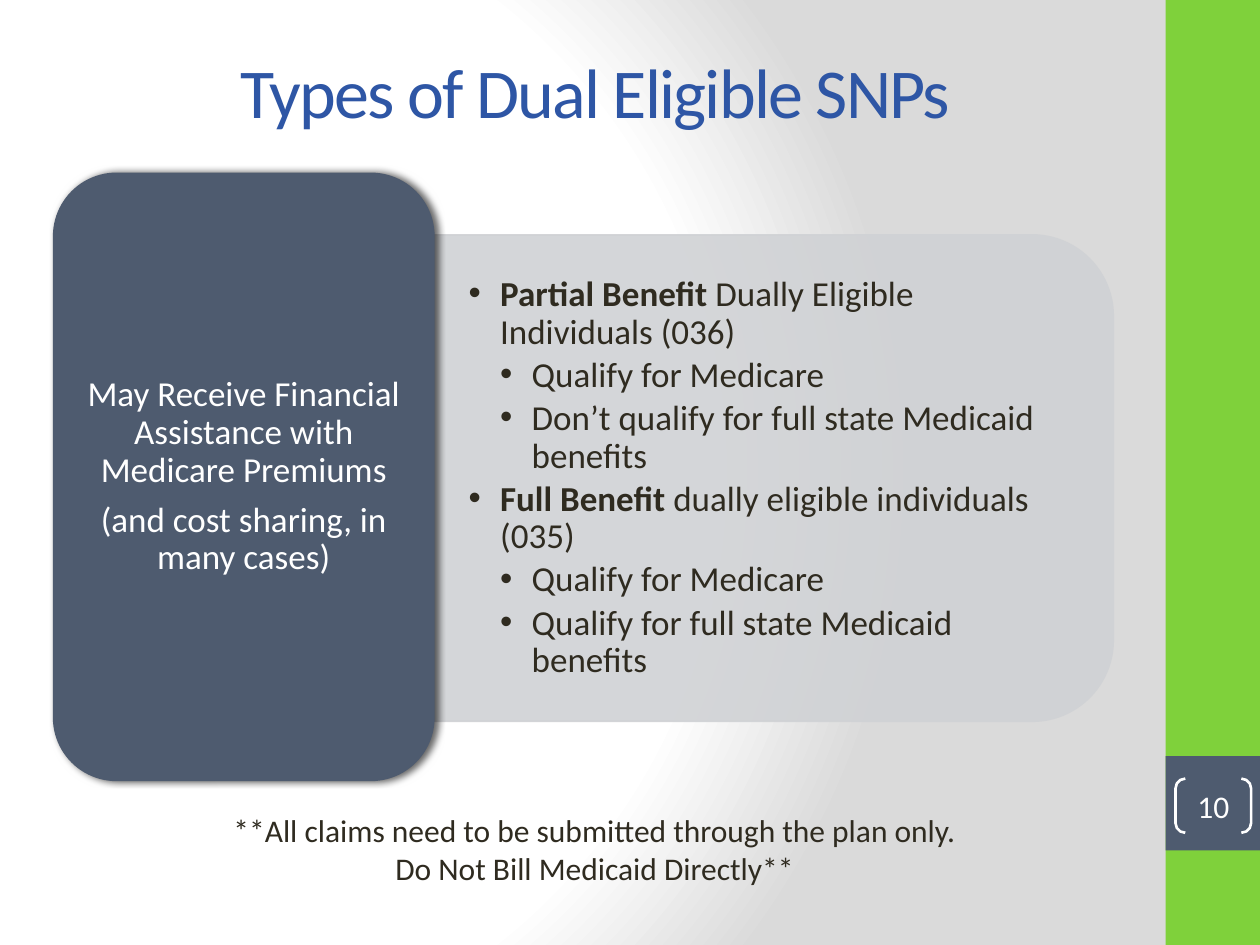
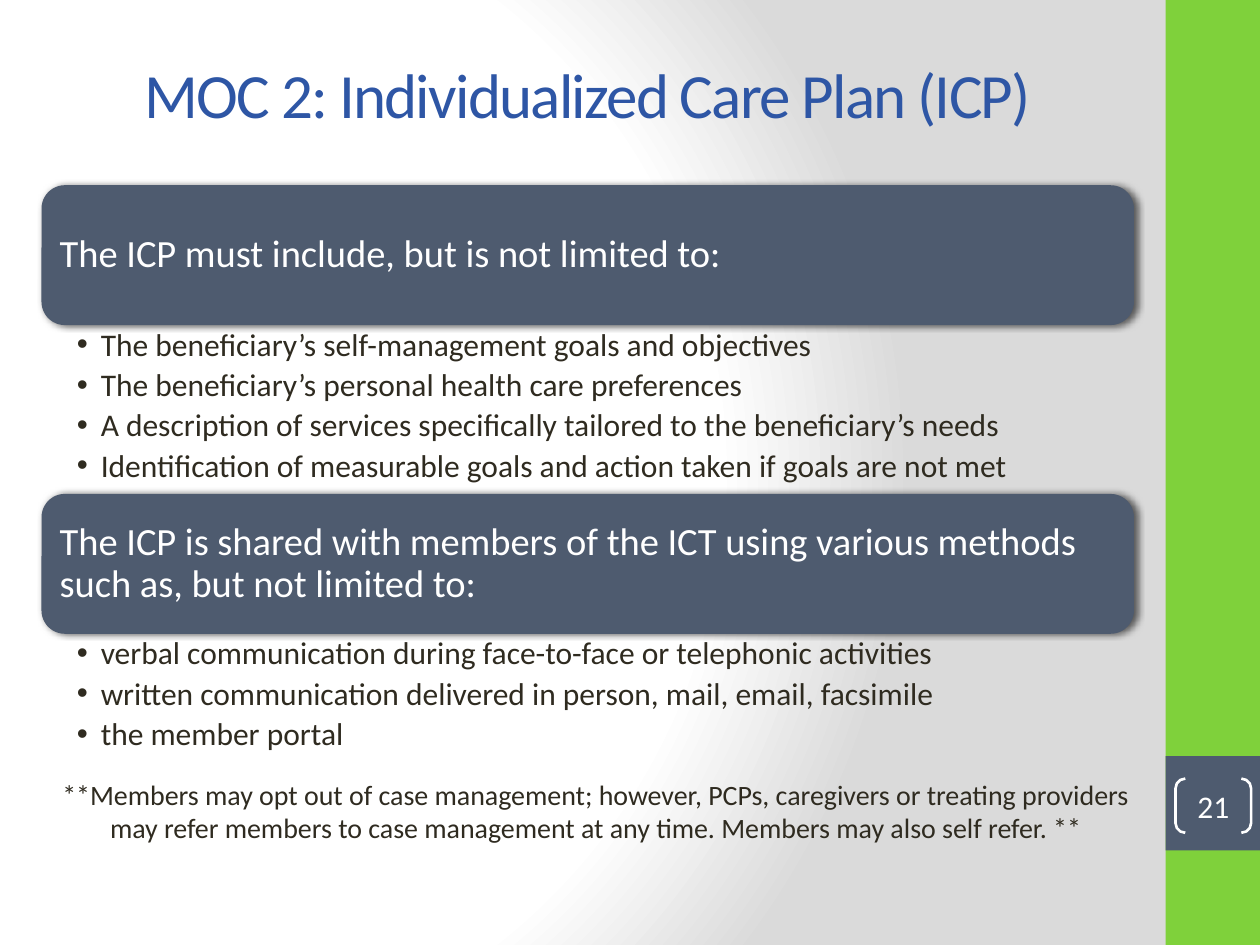
"""Build two slides on dual eligible plans and individualized care plans."""
from dataclasses import dataclass

from lxml import etree
from pptx import Presentation
from pptx.dml.color import RGBColor
from pptx.enum.shapes import MSO_SHAPE
from pptx.enum.text import MSO_ANCHOR, MSO_AUTO_SIZE, PP_ALIGN
from pptx.oxml import parse_xml
from pptx.oxml.ns import nsdecls, qn
from pptx.util import Inches, Pt

RECTANGLE = MSO_SHAPE.RECTANGLE
ROUNDED = MSO_SHAPE.ROUNDED_RECTANGLE
ROUNDED_TOP = MSO_SHAPE.ROUND_2_SAME_RECTANGLE
BRACKETS = MSO_SHAPE.DOUBLE_BRACKET
TOP, MIDDLE = MSO_ANCHOR.TOP, MSO_ANCHOR.MIDDLE
LEFT, CENTER = PP_ALIGN.LEFT, PP_ALIGN.CENTER
NO_FIT = MSO_AUTO_SIZE.NONE
TITLE_ONLY = 5
DEFAULT_INSETS = (0.1, 0.05, 0.1, 0.05)


@dataclass(frozen=True)
class Theme:
    """Colours and type sizes of the presentation."""
    font: str = "Calibri"
    title: str = "2E56A5"
    text: str = "2F2B20"
    white: str = "FFFFFF"
    shade: str = "DADADA"
    band: str = "7FD13B"
    card: str = "4E5B6F"
    panel: str = "D0D2D5"
    heading_size: int = 22
    large_size: int = 20
    body_size: int = 18
    note_size: int = 16


@dataclass(frozen=True)
class Item:
    """One paragraph with an optional bold lead and a bullet level."""
    text: str
    lead: str = ""
    level: int = 1


def write(frame, items, *, font, size, color, align=LEFT, anchor=TOP,
          insets=DEFAULT_INSETS, line_spacing=1.0, gap=0, bullet_indent=0,
          margin=0, tracking=0):
    """Fill a text frame with formatted paragraphs."""
    frame.word_wrap = True
    frame.auto_size = NO_FIT
    frame.vertical_anchor = anchor
    (frame.margin_left, frame.margin_top,
     frame.margin_right, frame.margin_bottom) = map(Inches, insets)
    for index, item in enumerate(items):
        if isinstance(item, str):
            item = Item(item)
        paragraph = frame.add_paragraph() if index else frame.paragraphs[0]
        paragraph.alignment = align
        paragraph.line_spacing = line_spacing
        paragraph.space_before = Pt(0)
        paragraph.space_after = Pt(size * gap)
        properties = paragraph._p.get_or_add_pPr()
        if bullet_indent:
            paragraph.level = item.level
            properties.set("marL", str(Inches(bullet_indent * item.level)))
            properties.set("indent", str(-Inches(bullet_indent)))
            etree.SubElement(properties, qn("a:buFont"), typeface="Arial")
            etree.SubElement(properties, qn("a:buChar"), char="•")
        elif margin:
            properties.set("marL", str(Inches(margin)))
        for words, bold in ((item.lead, True), (item.text, False)):
            if not words:
                continue
            run = paragraph.add_run()
            run.text = words
            run.font.name = font
            run.font.size = Pt(size)
            run.font.bold = bold
            run.font.color.rgb = RGBColor.from_string(color)
            if tracking:
                run._r.get_or_add_rPr().set("spc", str(tracking * 100))


class SlideBuilder:
    """Holds the theme and the current slide."""

    def __init__(self, presentation, theme):
        """Keep the presentation and its theme."""
        self.presentation = presentation
        self.theme = theme
        self.slide = None

    def start(self, title, number, box, size, line_spacing=1.0):
        """Add a slide with background, title, side band and page number."""
        theme = self.theme
        layout = self.presentation.slide_layouts[TITLE_ONLY]
        self.slide = self.presentation.slides.add_slide(layout)
        self.background()
        self.shape(RECTANGLE, (9.25, 0, 0.75, 7.5), theme.band)
        self.shape(RECTANGLE, (9.25, 6, 0.75, 0.75), theme.card)
        heading = self.slide.shapes.title
        (heading.left, heading.top,
         heading.width, heading.height) = map(Inches, box)
        self.text(heading, [title], size=size, color=theme.title,
                  align=CENTER, anchor=MIDDLE, line_spacing=line_spacing,
                  tracking=-1)
        self.page_number(number)

    def background(self):
        """Give the slide its radial gradient."""
        stops = ((0, self.theme.white), (75, self.theme.white),
                 (100, self.theme.shade))
        stop_list = "".join(
            f'<a:gs pos="{position * 1000}"><a:srgbClr val="{color}"/></a:gs>'
            for position, color in stops)
        self.slide._element.cSld.insert(0, parse_xml(
            f'<p:bg {nsdecls("p", "a")}><p:bgPr><a:gradFill rotWithShape="1">'
            f'<a:gsLst>{stop_list}</a:gsLst><a:path path="circle">'
            '<a:fillToRect l="20000" t="50000" r="100000" b="50000"/></a:path>'
            '</a:gradFill><a:effectLst/></p:bgPr></p:bg>'))

    def shape(self, kind, box, fill=None):
        """Add a flat preset shape without an outline."""
        shape = self.slide.shapes.add_shape(kind, *map(Inches, box))
        shape.shadow.inherit = False
        shape.line.fill.background()
        if fill:
            shape.fill.solid()
            shape.fill.fore_color.rgb = RGBColor.from_string(fill)
        else:
            shape.fill.background()
        return shape

    def text(self, shape, items, **style):
        """Write into a shape with the theme font."""
        write(shape.text_frame, items, font=self.theme.font, **style)

    def text_box(self, box, items, **style):
        """Add a text box in the body colour."""
        shape = self.slide.shapes.add_textbox(*map(Inches, box))
        self.text(shape, items, color=self.theme.text, **style)

    def page_number(self, number):
        """Add the bracketed page number."""
        brackets = self.shape(BRACKETS, (9.33, 6.18, 0.6, 0.43))
        brackets.adjustments[0] = 0.18
        brackets.line.color.rgb = RGBColor.from_string(self.theme.white)
        brackets.line.width = Pt(1.5)
        self.text(brackets, [str(number)], size=self.theme.body_size,
                  color=self.theme.white, align=CENTER, anchor=MIDDLE,
                  insets=(0, 0, 0, 0))

    def card(self, box, items, **style):
        """Add a dark rounded card with a soft shadow."""
        card = self.shape(ROUNDED, box, self.theme.card)
        effects = card._element.spPr.find(qn("a:effectLst"))
        effects.append(parse_xml(
            f'<a:outerShdw {nsdecls("a")} blurRad="{Pt(4)}" dist="{Pt(2)}" '
            'dir="0" rotWithShape="0"><a:srgbClr val="000000">'
            '<a:alpha val="60000"/></a:srgbClr></a:outerShdw>'))
        self.text(card, items, color=self.theme.white, anchor=MIDDLE,
                  line_spacing=0.9, gap=0.35, **style)

    def side_panel(self, box):
        """Add a translucent panel rounded on its right side."""
        panel = self.shape(ROUNDED_TOP, box, self.theme.panel)
        panel.rotation = 90
        panel.line.color.rgb = RGBColor.from_string(self.theme.panel)
        panel.line.width = Pt(1)
        for color in panel._element.spPr.iter(qn("a:srgbClr")):
            etree.SubElement(color, qn("a:alpha"), val="90000")

    def bullets(self, box, items, **style):
        """Add a bulleted list."""
        self.text_box(box, items, line_spacing=0.9, **style)

    def note(self, box, items, size, margin=0):
        """Add a centred closing note."""
        self.text_box(box, items, size=size, align=CENTER, margin=margin)


def add_eligibility_slide(builder):
    """Show the two types of dual eligible members."""
    theme = builder.theme
    builder.start("Types of Dual Eligible SNPs", 10,
                  (0.56, 0.09, 8.33, 1.25), 40)
    builder.side_panel((4.21, 1.1, 3.86, 5.39))
    builder.bullets((3.45, 2.05, 5.2, 3.49), [
        Item("Dually Eligible Individuals (036)", "Partial Benefit "),
        Item("Qualify for Medicare", level=2),
        Item("Don’t qualify for full state Medicaid benefits", level=2),
        Item("dually eligible individuals (035)", "Full Benefit "),
        Item("Qualify for Medicare", level=2),
        Item("Qualify for full state Medicaid benefits", level=2),
    ], size=theme.large_size, anchor=MIDDLE, gap=0.15, bullet_indent=0.25,
        insets=(0.27, 0.14, 0.27, 0.14))
    builder.card((0.42, 1.37, 3.03, 4.83), [
        "May Receive Financial Assistance with Medicare Premiums",
        "(and cost sharing, in many cases)",
    ], size=theme.large_size, align=CENTER, insets=(0.08, 0.04, 0.08, 0.04))
    builder.note((0.59, 6.39, 8.26, 0.71), [
        "**All claims need to be submitted through the plan only.",
        "Do Not Bill Medicaid Directly**",
    ], theme.body_size)


def add_care_plan_slide(builder):
    """Show what a care plan includes and how it is shared."""
    theme = builder.theme
    builder.start("MOC 2: Individualized Care Plan (ICP)", 21,
                  (0.5, 0.3, 8.33, 0.95), 36, line_spacing=0.9)
    sections = (
        ("The ICP must include, but is not limited to:", [
            "The beneficiary’s self-management goals and objectives",
            "The beneficiary’s personal health care preferences",
            "A description of services specifically tailored to the "
            "beneficiary’s needs",
            "Identification of measurable goals and action taken if goals "
            "are not met",
        ], 1.34),
        ("The ICP is shared with members of the ICT using various methods "
         "such as, but not limited to:", [
             "verbal communication during face-to-face or telephonic "
             "activities",
             "written communication delivered in person, mail, email, "
             "facsimile",
             "the member portal",
         ], 1.01),
    )
    left, top, width, card_height = 0.33, 1.47, 8.67, 1.11
    for heading, points, list_height in sections:
        builder.card((left, top, width, card_height), [heading],
                     size=theme.heading_size, insets=(0.09,) * 4)
        top += card_height
        builder.bullets((left, top, width, list_height), points,
                        size=theme.body_size, gap=0.2, bullet_indent=0.19,
                        insets=(0.28, 0.03, 0.14, 0.03))
        top += list_height
    builder.note((0.21, 6.12, 8.92, 0.64), [
        "**Members may opt out of case management; however, PCPs, caregivers "
        "or treating providers may refer members to case management at any "
        "time. Members may also self refer. **",
    ], theme.note_size, margin=0.12)


def main():
    """Build and save the presentation."""
    presentation = Presentation()
    presentation.slide_width = Inches(10)
    presentation.slide_height = Inches(7.5)
    builder = SlideBuilder(presentation, Theme())
    add_eligibility_slide(builder)
    add_care_plan_slide(builder)
    presentation.save("out.pptx")


if __name__ == "__main__":
    main()
